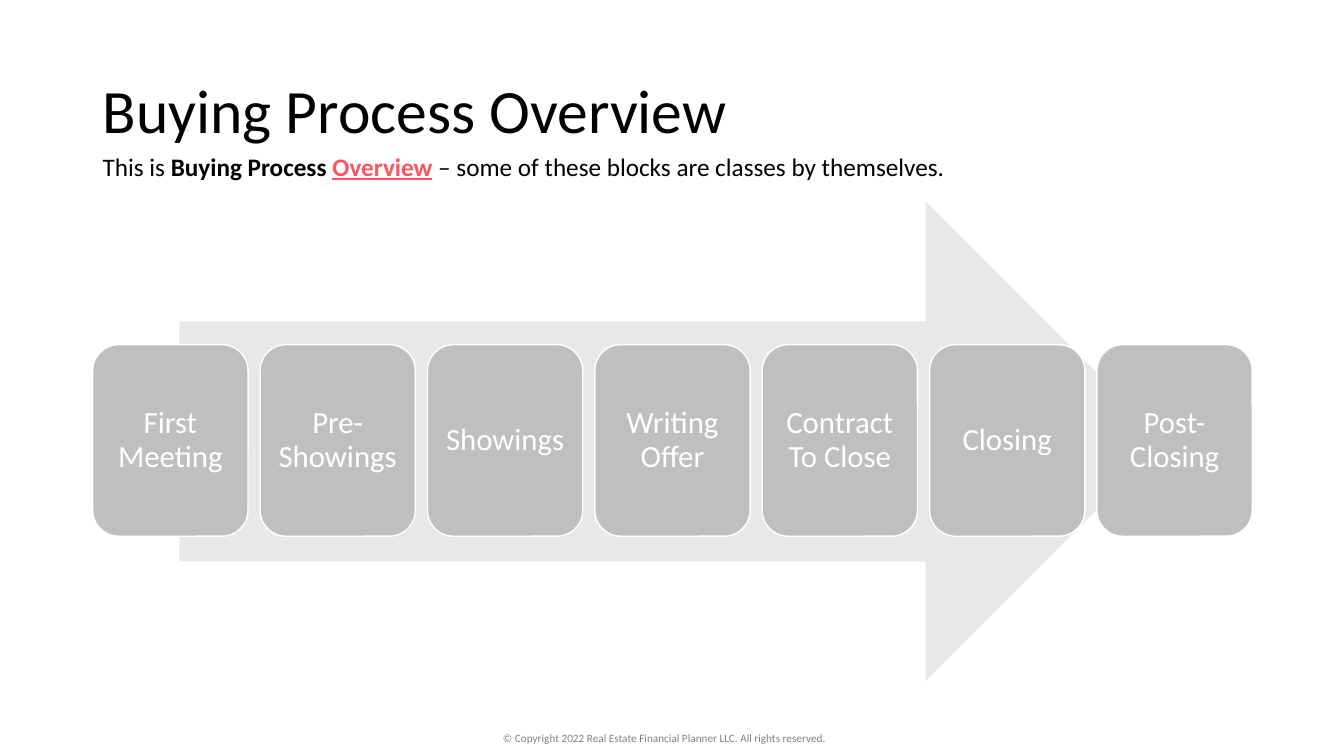
from dataclasses import dataclass

from pptx import Presentation
from pptx.dml.color import RGBColor
from pptx.enum.shapes import MSO_SHAPE
from pptx.enum.text import MSO_ANCHOR, MSO_AUTO_SIZE, PP_ALIGN
from pptx.util import Emu, Pt

ARROW, STEP = MSO_SHAPE.RIGHT_ARROW, MSO_SHAPE.ROUNDED_RECTANGLE
LEFT, CENTER = PP_ALIGN.LEFT, PP_ALIGN.CENTER
TOP, MIDDLE = MSO_ANCHOR.TOP, MSO_ANCHOR.MIDDLE
NO_FIT, GROW = MSO_AUTO_SIZE.NONE, MSO_AUTO_SIZE.SHAPE_TO_FIT_TEXT
TITLE_ONLY = 5
EMU_PER_PX = 9144  # 100 px to the inch


@dataclass(frozen=True)
class Theme:
    font: str = "Calibri"
    ink: str = "000000"
    accent: str = "FF5460"
    muted: str = "808080"
    light: str = "FFFFFF"
    arrow: str = "E8E8E8"
    step: str = "BFBFBF"
    title_size: int = 44
    step_size: int = 22
    intro_size: int = 18
    footer_size: int = 8


def px(*lengths):
    return [Emu(length * EMU_PER_PX) for length in lengths]


def write(frame, *runs, font, size, color, align=LEFT, anchor=TOP,
          spacing=1.0, wrap=True, fit=NO_FIT):
    """Fill a frame with one paragraph; each run is (text, font overrides)."""
    frame.word_wrap, frame.auto_size, frame.vertical_anchor = wrap, fit, anchor
    paragraph = frame.paragraphs[0]
    paragraph.alignment, paragraph.line_spacing = align, spacing
    for text, overrides in runs:
        run = paragraph.add_run()
        run.text = text
        run.font.name, run.font.size = font, Pt(size)
        run.font.bold = overrides.get("bold", False)
        run.font.underline = overrides.get("underline", False)
        run.font.color.rgb = RGBColor.from_string(overrides.get("color", color))


class SlideBuilder:
    def __init__(self, slide, theme):
        self.slide, self.theme = slide, theme

    def title(self, text, *box):
        heading = self.slide.shapes.title
        heading.left, heading.top, heading.width, heading.height = px(*box)
        write(heading.text_frame, (text, {}), font=self.theme.font,
              size=self.theme.title_size, color=self.theme.ink,
              anchor=MIDDLE, spacing=0.9)

    def text(self, runs, *box, **style):
        label = self.slide.shapes.add_textbox(*px(*box))
        write(label.text_frame, *runs, font=self.theme.font, fit=GROW, **style)

    def shape(self, kind, fill, *box, outline=None):
        block = self.slide.shapes.add_shape(kind, *px(*box))
        block.shadow.inherit = False
        block.fill.solid()
        block.fill.fore_color.rgb = RGBColor.from_string(fill)
        if outline:
            block.line.color.rgb = RGBColor.from_string(outline)
            block.line.width = Pt(1)
        else:
            block.line.fill.background()
        return block

    def step(self, text, *box):
        theme = self.theme
        frame = self.shape(STEP, theme.step, *box, outline=theme.light).text_frame
        inset, = px(9)
        frame.margin_left = frame.margin_right = inset
        frame.margin_top = frame.margin_bottom = inset
        write(frame, (text, {}), font=theme.font, size=theme.step_size,
              color=theme.light, align=CENTER, anchor=MIDDLE, spacing=0.9)


def main():
    deck = Presentation()
    deck.slide_width, deck.slide_height = px(1333, 750)
    theme = Theme()
    page = SlideBuilder(
        deck.slides.add_slide(deck.slide_layouts[TITLE_ONLY]), theme)

    page.text([("© Copyright 2022 Real Estate Financial Planner LLC. "
                "All rights reserved.", {})],
              489, 721, 355, 24, size=theme.footer_size, color=theme.muted)
    page.title("Buying Process Overview", 92, 40, 1150, 145)

    page.shape(ARROW, theme.arrow, 178, 200, 978, 476)
    steps = ["First Meeting", "Pre-Showings", "Showings", "Writing Offer",
             "Contract To Close", "Closing", "Post- Closing"]
    step_width, step_gap = 154, 12
    for index, step in enumerate(steps):
        page.step(step, 92 + index * (step_width + step_gap), 342, step_width, 190)

    page.text([("This is ", {}),
               ("Buying Process ", {"bold": True}),
               ("Overview", {"bold": True, "underline": True,
                             "color": theme.accent}),
               (" – some of these blocks are classes by themselves.", {})],
              92, 145, 863, 40, size=theme.intro_size, color=theme.ink,
              wrap=False)
    deck.save("out.pptx")


if __name__ == "__main__":
    main()
